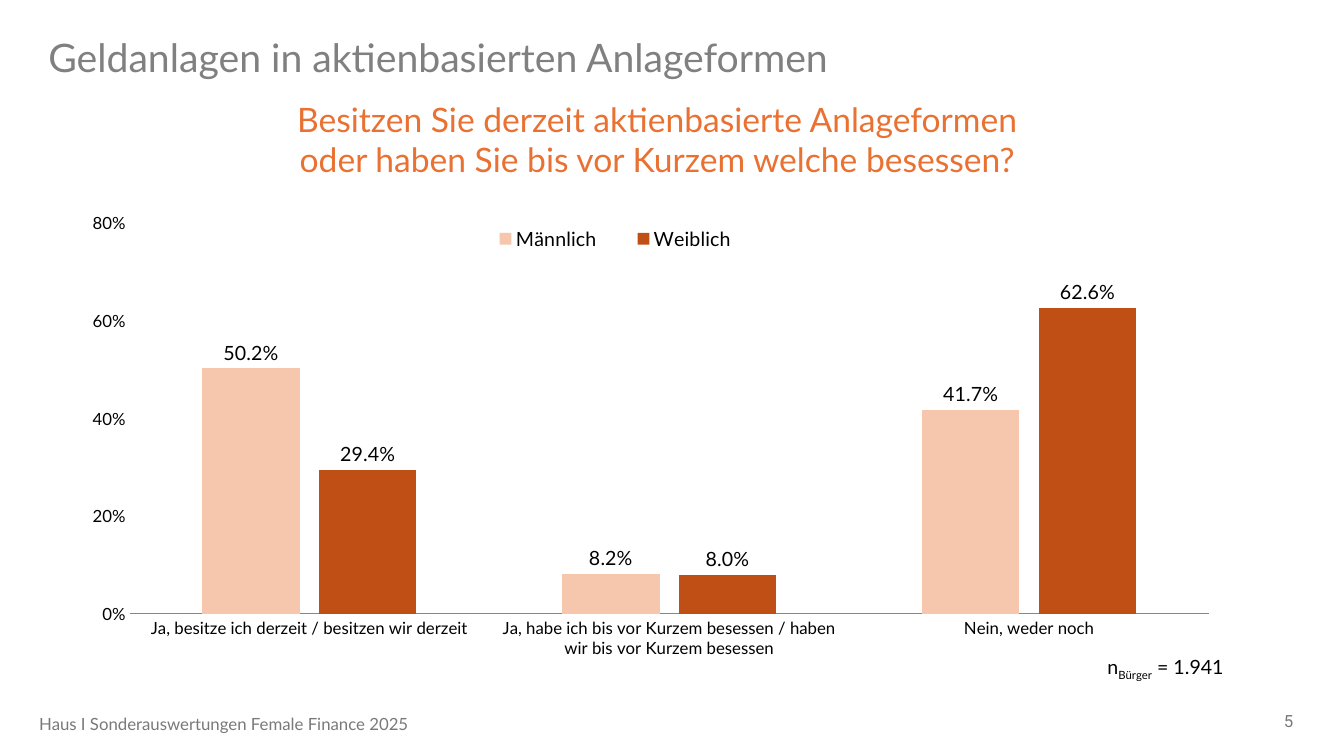
from lxml.etree import SubElement
from pptx import Presentation
from pptx.chart.data import CategoryChartData
from pptx.dml.color import RGBColor
from pptx.enum.chart import XL_CHART_TYPE, XL_LABEL_POSITION, XL_LEGEND_POSITION, XL_TICK_MARK
from pptx.enum.text import MSO_ANCHOR, PP_ALIGN
from pptx.oxml.ns import qn
from pptx.util import Cm, Pt

# Content: text, left, top, width, height in cm, then size, font, colour, alignment, anchor
MID, TOP = MSO_ANCHOR.MIDDLE, MSO_ANCHOR.TOP
LEFT, CENTER, RIGHT = PP_ALIGN.LEFT, PP_ALIGN.CENTER, PP_ALIGN.RIGHT
TEXTS = [
    ("Geldanlagen in aktienbasierten Anlageformen",
     (0.97, 0.76, 32.08, 1.35), 28, "Lato", "808080", LEFT, MID),
    ("Besitzen Sie derzeit aktienbasierte Anlageformen oder haben Sie bis vor Kurzem welche besessen?",
     (6.3, 2.36, 20.52, 2.31), 24, "Lato", "E97132", CENTER, TOP),
    ("5", (25.22, 17.65, 7.62, 1.02), 12, "Roboto", "797979", RIGHT, MID),
    ("Haus I Sonderauswertungen Female Finance 2025",
     (0.74, 17.73, 17.02, 1.02), 12, "Lato", "797979", LEFT, MID),
]
SAMPLE = [("n", None), ("Bürger", "-25000"), (" = 1.941", None)]
SAMPLE_BOX = (26.34, 16.38, 4.75, 0.86)

CHART_BOX = (1.45, 4.95, 30.23, 13.31)
CATEGORIES = [
    "Ja, besitze ich derzeit / besitzen wir derzeit",
    "Ja, habe ich bis vor Kurzem besessen / haben wir bis vor Kurzem besessen",
    "Nein, weder noch",
]
SERIES = [
    ("Männlich", "F6C6AD", (0.502, 0.082, 0.417)),
    ("Weiblich", "C04F15", (0.294, 0.08, 0.626)),
]
PLOT_AREA = (0.06, 0.05, 0.9, 0.74)
LEGEND_AREA = (0.34, 0.05, 0.25, 0.06)


def rgb(value):
    return RGBColor.from_string(value)


def style(font, size, name, color):
    font.size, font.name = Pt(size), name
    font.color.rgb = rgb(color)


def add_text(box, align, anchor):
    tf = s.shapes.add_textbox(*map(Cm, box)).text_frame
    tf.word_wrap = True
    tf.vertical_anchor = anchor
    p = tf.paragraphs[0]
    p.alignment = align
    return p


def fill_layout(layout, area, inner=False):
    for child in list(layout):
        layout.remove(child)
    manual = SubElement(layout, qn("c:manualLayout"))
    if inner:
        SubElement(manual, qn("c:layoutTarget")).set("val", "inner")
    for tag in ("xMode", "yMode"):
        SubElement(manual, qn("c:" + tag)).set("val", "edge")
    for tag, value in zip("xywh", area):
        SubElement(manual, qn("c:" + tag)).set("val", str(value))


def place(parent, area, index, inner=False):
    layout = parent.find(qn("c:layout"))
    if layout is None:
        layout = SubElement(parent, qn("c:layout"))
        parent.insert(index, layout)
    fill_layout(layout, area, inner)


prs = Presentation()
prs.slide_width, prs.slide_height = Cm(33.87), Cm(19.05)
s = prs.slides.add_slide(prs.slide_layouts[6])

# Chart
data = CategoryChartData(number_format="0.0%")
data.categories = CATEGORIES
for name, _, values in SERIES:
    data.add_series(name, values)
chart = s.shapes.add_chart(XL_CHART_TYPE.COLUMN_CLUSTERED, *map(Cm, CHART_BOX), data).chart
style(chart.font, 14, "Lato", "000000")
chart.has_title = False

plot = chart.plots[0]
plot.gap_width, plot.overlap = 150, -20
plot.vary_by_categories = False
for series, (_, color, _) in zip(plot.series, SERIES):
    series.format.fill.solid()
    series.format.fill.fore_color.rgb = rgb(color)
    labels = series.data_labels
    labels.show_value = True
    labels.position = XL_LABEL_POSITION.OUTSIDE_END
    labels.number_format, labels.number_format_is_linked = "0.0%", False
    style(labels.font, 14, "Lato", "000000")

# Axes
for axis in (chart.category_axis, chart.value_axis):
    axis.has_major_gridlines = False
    axis.major_tick_mark = axis.minor_tick_mark = XL_TICK_MARK.NONE
    style(axis.tick_labels.font, 12, "Lato", "000000")
chart.category_axis.format.line.color.rgb = rgb("868686")
axis = chart.value_axis
axis.minimum_scale, axis.maximum_scale, axis.major_unit = 0, 0.8, 0.2
axis.tick_labels.number_format, axis.tick_labels.number_format_is_linked = "0%", False
axis.format.line.fill.background()

# Legend and plot positions
chart.has_legend = True
chart.legend.position = XL_LEGEND_POSITION.RIGHT
chart.legend.include_in_layout = False
style(chart.legend.font, 14, "Lato", "000000")
plot_area = chart.element.find(".//" + qn("c:plotArea"))
place(plot_area, PLOT_AREA, 0, inner=True)
place(chart.element.find(".//" + qn("c:legend")), LEGEND_AREA, 1)

# Texts
for text, box, size, font, color, align, anchor in TEXTS:
    p = add_text(box, align, anchor)
    p.text = text
    style(p.runs[0].font, size, font, color)

# Sample size with subscript
p = add_text(SAMPLE_BOX, RIGHT, TOP)
for text, baseline in SAMPLE:
    r = p.add_run()
    r.text = text
    style(r.font, 14, "Lato", "000000")
    if baseline:
        r.font._element.set("baseline", baseline)

prs.save("out.pptx")
